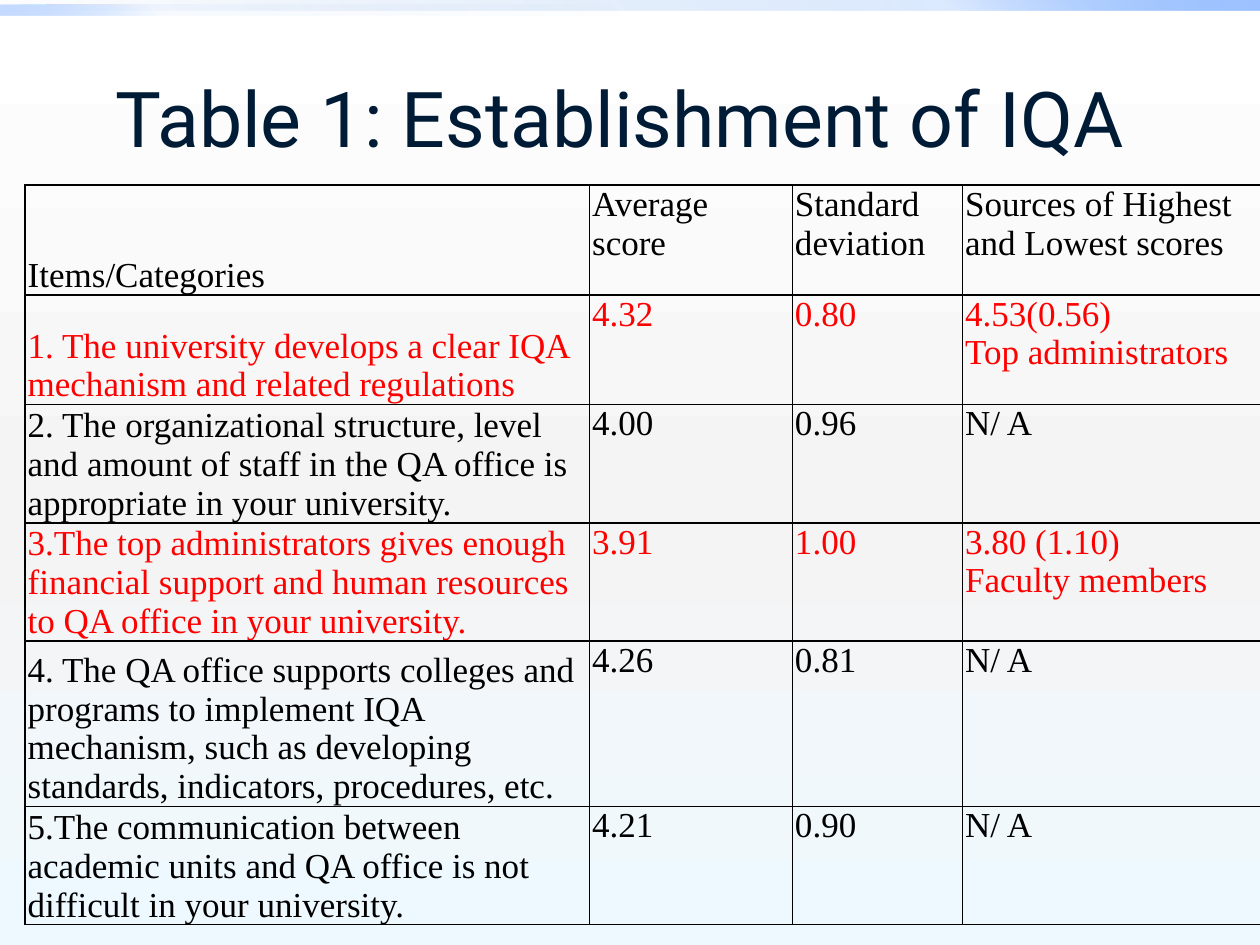
from lxml import etree
from pptx import Presentation
from pptx.dml.color import RGBColor
from pptx.enum.shapes import MSO_SHAPE
from pptx.enum.text import MSO_ANCHOR, PP_ALIGN
from pptx.oxml.ns import qn
from pptx.util import Inches, Pt

RECTANGLE = MSO_SHAPE.RECTANGLE
TOP, MIDDLE, BOTTOM = MSO_ANCHOR.TOP, MSO_ANCHOR.MIDDLE, MSO_ANCHOR.BOTTOM
CENTER = PP_ALIGN.CENTER
TITLE_ONLY = 5

COLORS = {
    "title": "001B36", "text": "000000", "highlight": "FF0000", "border": "000000",
    "white": "FFFFFF", "grey": "F4F4F4", "ice": "EEF9FF",
    "deep": "0058B7", "blue": "4F95FF", "sky": "9EC2FF",
}

# Gradient stops: position %, colour, opacity %
PAGE_STOPS = [(0, "white", 100), (55, "grey", 100), (100, "ice", 100)]
WIDE_BAND_STOPS = [(0, "deep", 0), (75, "blue", 20), (100, "sky", 100)]
SHORT_BAND_STOPS = [(0, "deep", 0), (75, "blue", 5), (100, "sky", 60)]

COLUMN_WIDTHS = [4.48, 1.61, 1.35, 2.37]
ROW_HEIGHTS = [0.87, 0.87, 0.94, 0.94, 1.31, 0.94]
HIGHLIGHTED_ROWS = {1, 3}
ROWS = [
    ["Items/Categories", "Average score", "Standard\ndeviation",
     "Sources of Highest and Lowest scores"],
    ["1. The university develops a clear IQA mechanism and related regulations",
     "4.32", "0.80", "4.53(0.56)\nTop administrators"],
    ["2. The organizational structure, level and amount of staff in the QA office "
     "is appropriate in your university.", "4.00", "0.96", "N/ A"],
    ["3.The top administrators gives enough financial support and human resources "
     "to QA office in your university.", "3.91", "1.00", "3.80 (1.10)\nFaculty members"],
    ["4. The QA office supports colleges and programs to implement IQA mechanism, "
     "such as developing standards, indicators, procedures, etc.", "4.26", "0.81", "N/ A"],
    ["5.The communication between academic units and QA office is not difficult "
     "in your university.", "4.21", "0.90", "N/ A"],
]
CELL_FORMAT = {
    "margin_left": Inches(0.02), "margin_right": Inches(0.02),
    "margin_top": 0, "margin_bottom": 0,
}


def set_format(target, values):
    for name, value in values.items():
        setattr(target, name, value)


def style_text(text_frame, font, size, color):
    for paragraph in text_frame.paragraphs:
        for run in paragraph.runs:
            set_format(run.font, {"name": font, "size": Pt(size)})
            run.font.color.rgb = RGBColor.from_string(COLORS[color])


def add_solid_color(parent, color):
    solid = etree.SubElement(parent, qn("a:solidFill"))
    return etree.SubElement(solid, qn("a:srgbClr"), val=COLORS[color])


def set_gradient(fill, element, stops, angle):
    fill.gradient()
    gradient = element.find(".//" + qn("a:gradFill"))
    stop_list = gradient.find(qn("a:gsLst"))
    for old_stop in list(stop_list):
        stop_list.remove(old_stop)
    for position, color, opacity in stops:
        stop = etree.SubElement(stop_list, qn("a:gs"), pos=str(position * 1000))
        tint = etree.SubElement(stop, qn("a:srgbClr"), val=COLORS[color])
        if opacity < 100:
            etree.SubElement(tint, qn("a:alpha"), val=str(opacity * 1000))
    gradient.find(qn("a:lin")).set("ang", str(angle * 60000))


def add_band(slide, top, width, stops, angle):
    band = slide.shapes.add_shape(RECTANGLE, 0, Inches(top), Inches(width), Inches(0.08))
    band.shadow.inherit = False
    band.line.fill.background()
    set_gradient(band.fill, band._element, stops, angle)


def add_title(slide, text):
    title = slide.shapes.title
    set_format(title, {"left": Inches(0.5), "top": Inches(0.3),
                       "width": Inches(9), "height": Inches(1.25)})
    title.text_frame.text = text
    title.text_frame.vertical_anchor = MIDDLE
    title.text_frame.paragraphs[0].alignment = CENTER
    style_text(title.text_frame, "Roboto", 44, "title")


def set_borders(cell):
    properties = cell._tc.get_or_add_tcPr()
    for index, side in enumerate(("a:lnL", "a:lnR", "a:lnT", "a:lnB")):
        line = etree.Element(qn(side), w=str(Pt(1)))
        add_solid_color(line, "border")
        properties.insert(index, line)


def add_score_table(slide):
    frame = slide.shapes.add_table(
        len(ROWS), len(COLUMN_WIDTHS), Inches(0.2), Inches(1.47),
        Inches(sum(COLUMN_WIDTHS)), Inches(sum(ROW_HEIGHTS)))
    table = frame.table
    set_format(table, {"first_row": False, "horz_banding": False})
    for column, width in zip(table.columns, COLUMN_WIDTHS):
        column.width = Inches(width)
    for row, height in zip(table.rows, ROW_HEIGHTS):
        row.height = Inches(height)

    for row_index, row_texts in enumerate(ROWS):
        color = "highlight" if row_index in HIGHLIGHTED_ROWS else "text"
        for column_index, text in enumerate(row_texts):
            cell = table.cell(row_index, column_index)
            cell.text = text
            set_format(cell, CELL_FORMAT)
            cell.vertical_anchor = TOP if column_index else BOTTOM
            cell.fill.background()
            set_borders(cell)
            style_text(cell.text_frame, "Times New Roman", 20, color)


def main():
    presentation = Presentation()
    set_format(presentation, {"slide_width": Inches(10), "slide_height": Inches(7.5)})
    slide = presentation.slides.add_slide(presentation.slide_layouts[TITLE_ONLY])

    # Background and top bands
    set_gradient(slide.background.fill, slide._element, PAGE_STOPS, 90)
    add_band(slide, 0, 10, WIDE_BAND_STOPS, 315)
    add_band(slide, 0.04, 5, SHORT_BAND_STOPS, 135)

    # Title and scores; the title's final space shifts the centred line left
    add_title(slide, "Table 1: Establishment of IQA ")
    add_score_table(slide)

    presentation.save("out.pptx")


if __name__ == "__main__":
    main()
